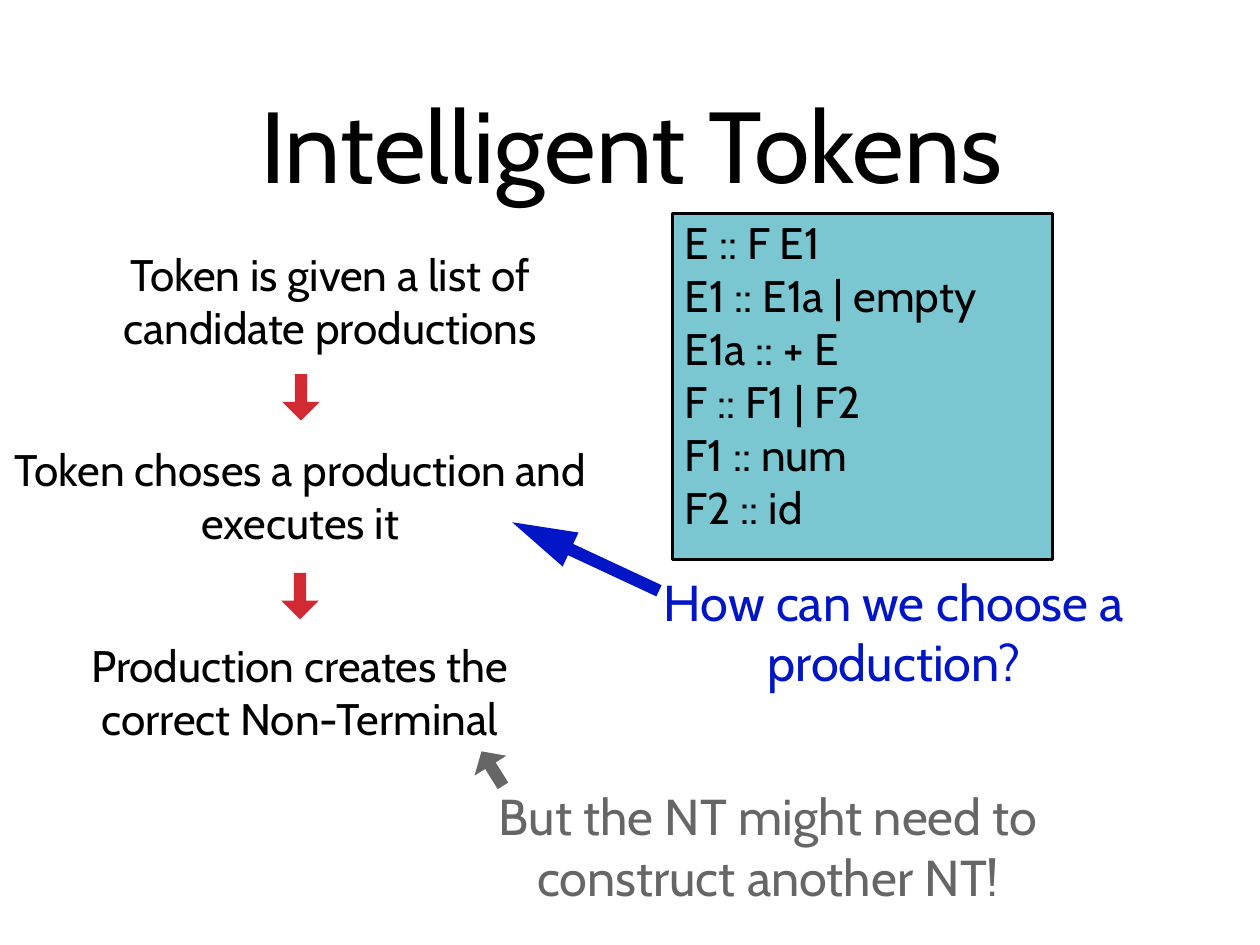
import pptx
import pptx.util
import pptx.dml.color
from pptx.enum.shapes import MSO_SHAPE
from pptx.enum.text import MSO_ANCHOR, PP_ALIGN

Cm = pptx.util.Cm
Pt = pptx.util.Pt

BLACK, RED, BLUE, GREY, TEAL = "000000", "D12A33", "0015C6", "666666", "7AC6D1"


def rgb(value):
    return pptx.dml.color.RGBColor.from_string(value)


class Deck:
    font = "Cabin"
    arrow_height = 0.84

    def __init__(self, width, height):
        self.prs = pptx.Presentation()
        self.prs.slide_width, self.prs.slide_height = Cm(width), Cm(height)
        self.s = self.prs.slides.add_slide(self.prs.slide_layouts[6])

    def set_text(self, sp, lines, size, color, align, anchor, left=0, top=0):
        tf = sp.text_frame
        tf.word_wrap = True
        tf.vertical_anchor = anchor
        tf.margin_left, tf.margin_top = Cm(left), Cm(top)
        tf.margin_right = tf.margin_bottom = 0
        tf.text = "\n".join(lines)
        for p in tf.paragraphs:
            p.alignment = align
            p.font.name, p.font.size = self.font, Pt(size)
            p.font.color.rgb = rgb(color)

    def text(self, x, y, w, h, text, size=28, color=BLACK, anchor=MSO_ANCHOR.TOP):
        sp = self.s.shapes.add_textbox(Cm(x), Cm(y), Cm(w), Cm(h))
        self.set_text(sp, [text], size, color, PP_ALIGN.CENTER, anchor)

    def shape(self, kind, x, y, w, h, fill):
        sp = self.s.shapes.add_shape(kind, Cm(x), Cm(y), Cm(w), Cm(h))
        sp.shadow.inherit = False
        sp.fill.solid()
        sp.fill.fore_color.rgb = rgb(fill)
        sp.line.fill.background()
        return sp

    def arrow(self, x, y, length, angle, color, head=0.5):
        sp = self.shape(MSO_SHAPE.RIGHT_ARROW, x, y, length, self.arrow_height, color)
        sp.adjustments[0], sp.adjustments[1] = 0.33, head
        sp.rotation = angle

    def panel(self, x, y, w, h, lines):
        sp = self.shape(MSO_SHAPE.RECTANGLE, x, y, w, h, TEAL)
        sp.line.color.rgb = rgb(BLACK)
        sp.line.width = Pt(2)
        self.set_text(sp, lines, 28, BLACK, PP_ALIGN.LEFT, MSO_ANCHOR.TOP, 0.28, 0.05)


def main():
    deck = Deck(28.22, 21.16)
    deck.text(2.78, 0.56, 22.71, 5.28, "Intelligent Tokens", 64, anchor=MSO_ANCHOR.MIDDLE)

    deck.text(1.98, 5.54, 10.82, 2.39, "Token is given a list of candidate productions")
    deck.arrow(6.22, 8.48, 1.04, 90, RED)
    deck.text(0.3, 9.91, 12.85, 2.39, "Token choses a production and executes it")
    deck.arrow(6.2, 12.93, 1.04, 90, RED)
    deck.text(0.97, 14.3, 11.48, 2.39, "Production creates the correct Non-Terminal")

    deck.arrow(11.3, 12.04, 3.63, 205, BLUE, 1.72)
    deck.text(14.83, 12.78, 10.39, 2.72, "How can we choose a production?", 32, BLUE)
    deck.arrow(10.57, 16.79, 0.91, 238, GREY, 0.45)
    deck.text(10.95, 17.58, 12.52, 2.72, "But the NT might need to construct another NT!", 32, GREY)

    grammar = ["E :: F E1", "E1 :: E1a | empty", "E1a :: + E",
               "F :: F1 | F2", "F1 :: num", "F2 :: id"]
    deck.panel(15.06, 4.78, 8.51, 7.75, grammar)
    deck.prs.save("out.pptx")


if __name__ == "__main__":
    main()
